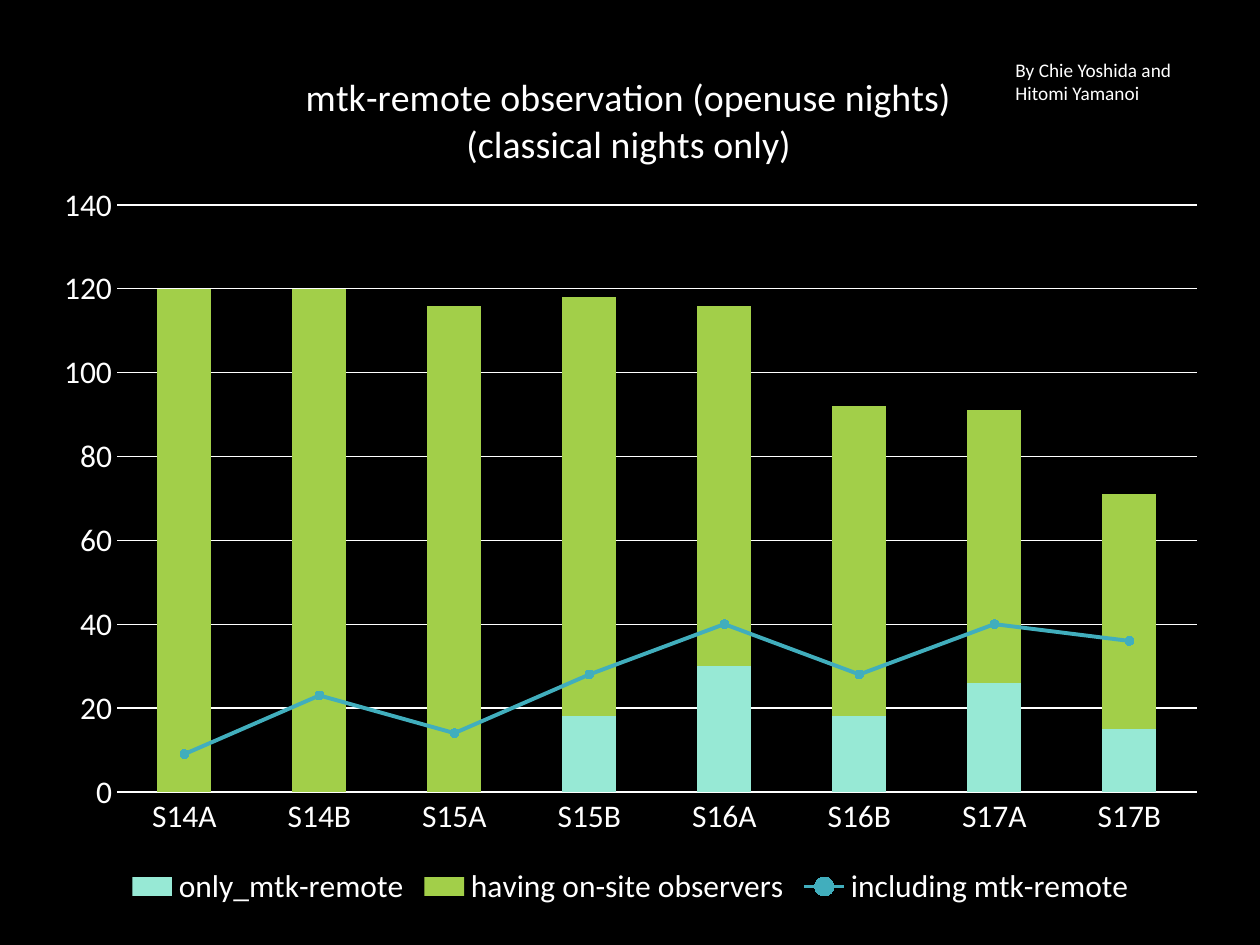
"""Build a slide with a stacked column and line chart of remote observation nights."""
from dataclasses import dataclass

import pptx
import pptx.chart.data
import pptx.dml.color
import pptx.enum.chart
import pptx.enum.text
import pptx.oxml
import pptx.oxml.ns
import pptx.util

TITLE = ["mtk-remote observation (openuse nights)", "(classical nights only)"]
CREDIT = "By Chie Yoshida and Hitomi Yamanoi"
SEMESTERS = ["S14A", "S14B", "S15A", "S15B", "S16A", "S16B", "S17A", "S17B"]
NIGHTS = {
    "only_mtk-remote": [None, None, None, 18, 30, 18, 26, 15],
    "having on-site observers": [120, 120, 116, 100, 86, 74, 65, 56],
    "including mtk-remote": [9, 23, 14, 28, 40, 28, 40, 36],
}
PAGE_SIZE = (1260, 945)
CHART_BOX = (40, 38, 1181, 874)
PLOT_BOX = (117, 205, 1080, 587)
TITLE_CORNER = (302, 68)
CREDIT_BOX = (1003, 52, 220, 59)


@dataclass(frozen=True)
class Theme:
    font: str = "Calibri"
    background: str = "000000"
    text: str = "FFFFFF"
    bars: tuple = ("97E9D5", "A2CF49")
    line: str = "41AEBD"
    title_size: float = 21.6
    chart_size: float = 18
    credit_size: float = 11
    thin: float = 0.75
    thick: float = 2.25


THEME = Theme()


def px(count):
    return pptx.util.Emu(round(count * 914400 / 126))


def paint(fill, color):
    fill.solid()
    fill.fore_color.rgb = pptx.dml.color.RGBColor.from_string(color)


def draw_line(line, color, width):
    paint(line.fill, color)
    line.width = pptx.util.Pt(width)


def set_font(font, size):
    font.name = THEME.font
    font.size = pptx.util.Pt(size)
    font.bold = False
    paint(font.fill, THEME.text)


def add_child(parent, tag, value=None):
    child = pptx.oxml.parse_xml(f'<c:{tag} {pptx.oxml.ns.nsdecls("c")}/>')
    if value is not None:
        child.set("val", str(value))
    parent.append(child)
    return child


def set_layout(parent, index, bounds, inner=False):
    for old in parent.findall(pptx.oxml.ns.qn("c:layout")):
        parent.remove(old)
    layout = add_child(parent, "layout")
    parent.insert(index, layout)
    manual = add_child(layout, "manualLayout")
    if inner:
        add_child(manual, "layoutTarget", "inner")
    for tag in ("xMode", "yMode"):
        add_child(manual, tag, "edge")
    left, top, width, height = CHART_BOX
    fractions = [(bounds[0] - left) / width, (bounds[1] - top) / height]
    fractions += [length / whole for length, whole in zip(bounds[2:], (width, height))]
    for tag, fraction in zip("xywh", fractions):
        add_child(manual, tag, round(fraction, 4))


def move_last_series_to_line(chart):
    bars = chart.plots[0]._element
    series = bars.findall(pptx.oxml.ns.qn("c:ser"))[-1]
    for flag in series.findall(pptx.oxml.ns.qn("c:invertIfNegative")):
        series.remove(flag)
    line = add_child(bars.getparent(), "lineChart")
    bars.addnext(line)
    add_child(line, "grouping", "standard")
    add_child(line, "varyColors", 0)
    line.append(series)
    add_child(line, "marker", 1)
    for axis in bars.findall(pptx.oxml.ns.qn("c:axId")):
        add_child(line, "axId", axis.get("val"))


def style_series(chart):
    columns, trend = chart.plots
    columns.gap_width = 150
    columns.overlap = 100
    columns.vary_by_categories = False
    for series, color in zip(columns.series, THEME.bars):
        paint(series.format.fill, color)
    series = trend.series[0]
    series.smooth = False
    draw_line(series.format.line, THEME.line, THEME.thick)
    series.marker.style = pptx.enum.chart.XL_MARKER_STYLE.CIRCLE
    series.marker.size = 5
    paint(series.marker.format.fill, THEME.line)
    draw_line(series.marker.format.line, THEME.line, THEME.thin)


def style_axes(chart):
    for axis in (chart.category_axis, chart.value_axis):
        axis.major_tick_mark = pptx.enum.chart.XL_TICK_MARK.NONE
        axis.minor_tick_mark = pptx.enum.chart.XL_TICK_MARK.NONE
        set_font(axis.tick_labels.font, THEME.chart_size)
    draw_line(chart.category_axis.format.line, THEME.text, THEME.thin)
    values = chart.value_axis
    values.minimum_scale, values.maximum_scale, values.major_unit = 0, 140, 20
    values.format.line.fill.background()
    draw_line(values.major_gridlines.format.line, THEME.text, THEME.thin)


def add_title(chart):
    chart.has_title = True
    frame = chart.chart_title.text_frame
    frame.text = "\n".join(TITLE)
    for para in frame.paragraphs:
        para.alignment = pptx.enum.text.PP_ALIGN.CENTER
        set_font(para.font, THEME.title_size)
    set_layout(chart.chart_title._element, 1, TITLE_CORNER)


def add_nights_chart(page):
    data = pptx.chart.data.CategoryChartData()
    data.categories = SEMESTERS
    for name, values in NIGHTS.items():
        data.add_series(name, values)
    kind = pptx.enum.chart.XL_CHART_TYPE.COLUMN_STACKED
    chart = page.shapes.add_chart(kind, *map(px, CHART_BOX), data).chart
    set_font(chart.font, THEME.chart_size)
    move_last_series_to_line(chart)
    style_series(chart)
    style_axes(chart)
    add_title(chart)
    set_layout(chart.plots[0]._element.getparent(), 0, PLOT_BOX, inner=True)
    chart.has_legend = True
    chart.legend.position = pptx.enum.chart.XL_LEGEND_POSITION.BOTTOM
    chart.legend.include_in_layout = False
    set_font(chart.legend.font, THEME.chart_size)


def add_credit(page):
    frame = page.shapes.add_textbox(*map(px, CREDIT_BOX)).text_frame
    frame.word_wrap = True
    frame.auto_size = pptx.enum.text.MSO_AUTO_SIZE.SHAPE_TO_FIT_TEXT
    frame.text = CREDIT
    set_font(frame.paragraphs[0].font, THEME.credit_size)


def main():
    deck = pptx.Presentation()
    deck.slide_width, deck.slide_height = map(px, PAGE_SIZE)
    page = deck.slides.add_slide(deck.slide_layouts[6])
    paint(page.background.fill, THEME.background)
    add_nights_chart(page)
    add_credit(page)
    deck.save("out.pptx")


if __name__ == "__main__":
    main()
